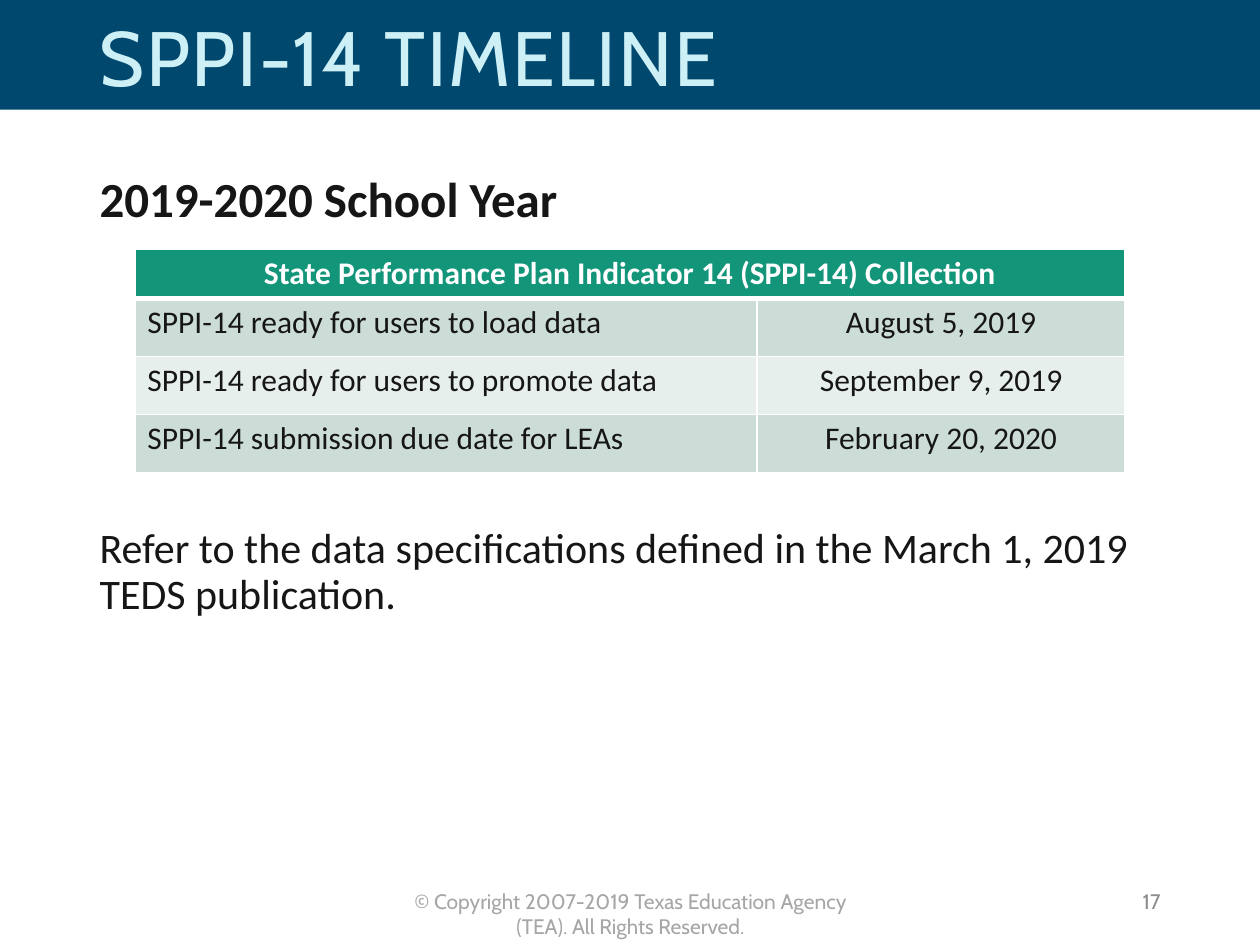
import pptx
import pptx.dml.color
import pptx.enum.shapes
import pptx.enum.text
import pptx.oxml
import pptx.oxml.ns
import pptx.util
from dataclasses import dataclass

Pt = pptx.util.Pt
Align = pptx.enum.text.PP_ALIGN
Anchor = pptx.enum.text.MSO_ANCHOR


@dataclass
class Theme:
    head: str = "Cabin"
    text: str = "Calibri"
    navy: str = "00486E"
    ice: str = "CCF0F5"
    ink: str = "171616"
    green: str = "129579"
    bands: tuple = ("CCDDD7", "E7EFEC")
    white: str = "FFFFFF"
    foot: str = "A6A6A6"
    page: str = "8C8C8C"
    title: int = 44
    lead: int = 28
    body: int = 24
    cell: int = 18
    small: int = 12


theme = Theme()
rgb = pptx.dml.color.RGBColor.from_string

deck = pptx.Presentation()
deck.slide_width = pptx.util.Inches(10)
deck.slide_height = pptx.util.Inches(7.5)
unit = deck.slide_width / 10  # square grid: 10 columns by 7.5 rows
slide = deck.slides.add_slide(deck.slide_layouts[1])
shapes = slide.shapes


def grid(*cells):
    """Turn grid columns and rows into lengths."""
    return [round(cell * unit) for cell in cells]


def style(para, face, size, color, bold=False, align=Align.LEFT):
    para.alignment = align
    font = para.font
    font.name, font.size, font.bold = face, Pt(size), bold
    font.color.rgb = rgb(color)


# Title band, behind everything
band = shapes.add_shape(pptx.enum.shapes.MSO_SHAPE.RECTANGLE, *grid(0, 0, 10, 0.87))
band.shadow.inherit = False
band.fill.solid()
band.fill.fore_color.rgb = rgb(theme.navy)
band.line.fill.background()
shapes._spTree.insert(2, band._element)

# Title and body
title, body = shapes.title, slide.placeholders[1]
for holder, box in ((title, (0.69, 0.05, 8, 0.87)), (body, (0.69, 1.34, 8.62, 5.42))):
    holder.left, holder.top, holder.width, holder.height = grid(*box)
    holder.text_frame.auto_size = pptx.enum.text.MSO_AUTO_SIZE.NONE

title.text_frame.text = "SPPI-14 TIMELINE"
title.text_frame.vertical_anchor = Anchor.MIDDLE
para = title.text_frame.paragraphs[0]
para.line_spacing = 0.9
style(para, theme.head, theme.title, theme.ice)
para.runs[0].font._element.set("spc", "100")

body.text_frame.text = (
    "2019-2020 School Year\n"
    "Refer to the data specifications defined in the March 1, 2019 TEDS publication."
)
looks = ((theme.lead, True, 0), (theme.body, False, 171))  # the gap holds the table
for para, (size, bold, gap) in zip(body.text_frame.paragraphs, looks):
    props = para._p.get_or_add_pPr()
    props.set("marL", "0")
    props.set("indent", "0")
    props.append(pptx.oxml.parse_xml(f"<a:buNone {pptx.oxml.ns.nsdecls('a')}/>"))
    para.line_spacing = 0.9
    para.space_before = Pt(gap)
    style(para, theme.text, size, theme.ink, bold)

# Timeline table
rows = (
    ("State Performance Plan Indicator 14 (SPPI-14) Collection", ""),
    ("SPPI-14 ready for users to load data", "August 5, 2019"),
    ("SPPI-14 ready for users to promote data", "September 9, 2019"),
    ("SPPI-14 submission due date for LEAs", "February 20, 2020"),
)
table = shapes.add_table(len(rows), 2, *grid(1.07, 1.98, 7.86, 1.77)).table
for col, width in zip(table.columns, grid(4.94, 2.92)):
    col.width = width
for row, height in zip(table.rows, grid(0.39, 0.46, 0.46, 0.46)):
    row.height = height
table.cell(0, 0).merge(table.cell(0, 1))

for r, texts in enumerate(rows):
    top = r == 0
    for c, text in enumerate(texts):
        cell = table.cell(r, c)
        cell.margin_top = cell.margin_bottom = Pt(3)
        cell.fill.solid()
        cell.fill.fore_color.rgb = rgb(theme.green if top else theme.bands[(r - 1) % 2])
        if text:
            cell.text = text
            style(cell.text_frame.paragraphs[0], theme.text, theme.cell,
                  theme.white if top else theme.ink, top,
                  Align.CENTER if top or c else Align.LEFT)
        props = cell._tc.get_or_add_tcPr()
        for i, side in enumerate("LRTB"):
            thick = (top and side == "B") or (r == 1 and side == "T")
            props.insert(i, pptx.oxml.parse_xml(
                f'<a:ln{side} {pptx.oxml.ns.nsdecls("a")} w="{Pt(3 if thick else 1)}">'
                f'<a:solidFill><a:srgbClr val="{theme.white}"/></a:solidFill></a:ln{side}>'))

# Footer and page number
notes = (
    ("© Copyright 2007-2019 Texas Education Agency (TEA). All Rights Reserved.",
     (3.04, 7, 3.93, 0.3), theme.foot, Align.CENTER, Anchor.TOP),
    ("17", (7.06, 6.95, 2.25, 0.4), theme.page, Align.RIGHT, Anchor.MIDDLE),
)
for text, box, color, align, anchor in notes:
    frame = shapes.add_textbox(*grid(*box)).text_frame
    frame.word_wrap = True
    frame.vertical_anchor = anchor
    frame.text = text
    style(frame.paragraphs[0], theme.head, theme.small, color, align=align)

deck.save("out.pptx")
